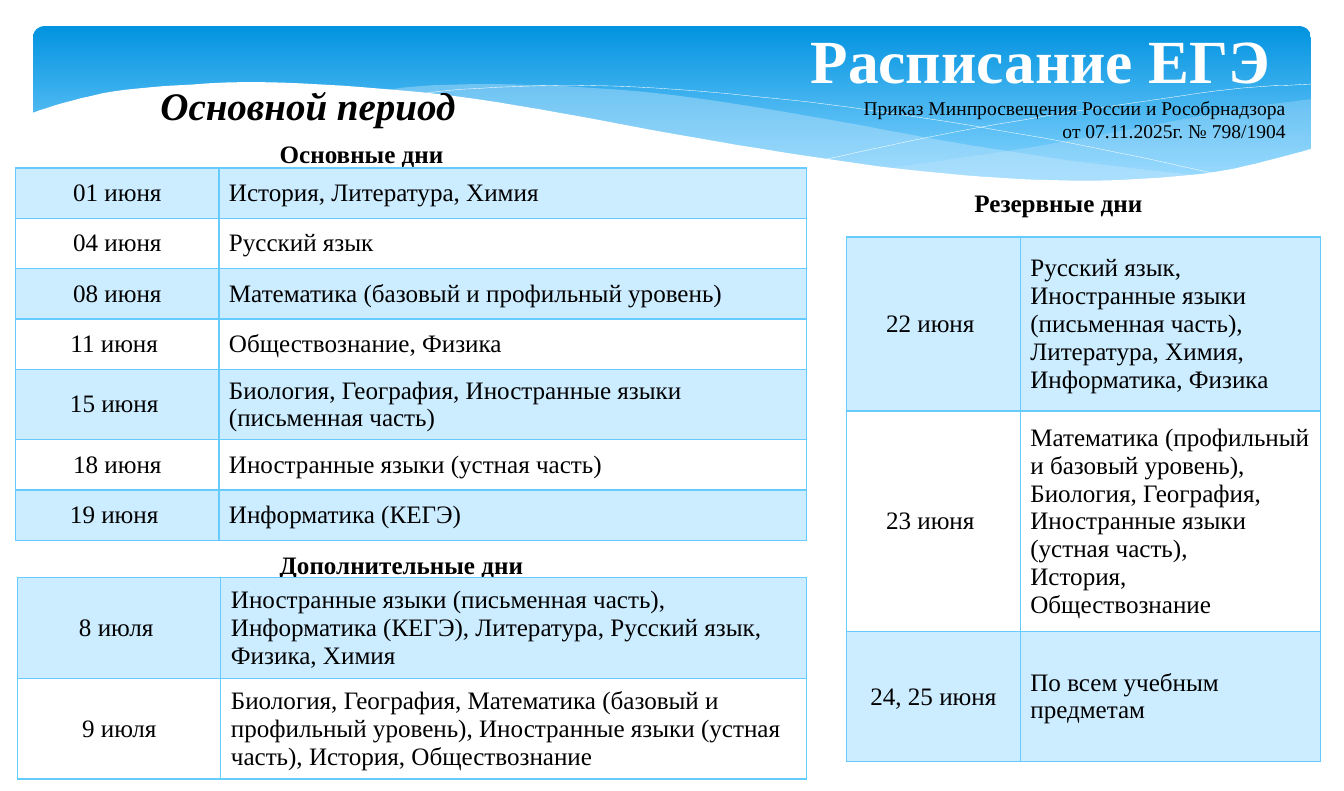
from dataclasses import dataclass
from lxml.etree import SubElement
from pptx import Presentation
from pptx.dml.color import RGBColor
from pptx.enum.shapes import MSO_SHAPE
from pptx.enum.text import MSO_ANCHOR, PP_ALIGN
from pptx.oxml.ns import qn
from pptx.util import Cm, Pt


@dataclass(frozen=True)
class Theme:
    """Colours, font and type sizes of the slide."""
    font: str = "Times New Roman"
    ink: str = "000000"
    paper: str = "FFFFFF"
    sky: str = "0293E0"
    pale: str = "83D3FE"
    mist: str = "C6E7FC"
    band: str = "CCECFF"
    rule: str = "66CCFF"
    title: int = 44
    head: int = 28
    body: int = 18
    note: int = 14


THEME = Theme()

SHEEN = [
    [(3233, 185), (3045, 211), (2842, 249), (2565, 300), (2316, 338), (2164, 361)],
    [(2164, 361), (2360, 378), (2647, 394), (2850, 386), (3048, 361), (3233, 312)],
]
SWELL = [
    [(2951, 378), (2659, 345), (2316, 292), (2055, 244), (1803, 201), (1577, 170),
     (1344, 152), (1146, 147), (980, 152), (889, 163)],
    [(889, 163), (1148, 193), (1445, 244), (1842, 315), (2126, 356), (2418, 386),
     (2659, 396), (2832, 391), (2951, 378)],
]
FALL = [[(968, 173), (1085, 160), (1331, 150), (1577, 157), (1895, 185), (2177, 221),
         (2502, 274), (2743, 320), (3002, 376)]]
RISE = [[(2002, 338), (2278, 279), (2555, 229), (2863, 183), (3058, 157), (3233, 147)]]
FRONT = [
    [(3238, 310), (3145, 335), (3010, 366), (2850, 384), (2664, 391), (2446, 384),
     (2189, 361), (1887, 318), (1626, 274), (1339, 221), (1072, 178), (836, 155),
     (574, 142), (366, 150), (206, 165), (71, 196), (-5, 221)],
    [(-5, 531), (3238, 531)],
]

MAIN = [
    ("01 июня", "История, Литература, Химия"),
    ("04 июня", "Русский язык"),
    ("08 июня", "Математика (базовый и профильный уровень)"),
    ("11 июня ", "Обществознание, Физика"),
    ("15 июня ", "Биология, География, Иностранные языки (письменная часть)"),
    ("18 июня", "Иностранные языки (устная часть)"),
    ("19 июня ", "Информатика (КЕГЭ)"),
]
SPARE = [
    ("22 июня ", "Русский язык, Иностранные языки (письменная часть),\n"
                 "Литература, Химия, Информатика, Физика"),
    ("23 июня ", "Математика (профильный и базовый уровень), Биология, География, "
                 "Иностранные языки (устная часть),\nИстория, Обществознание"),
    ("24, 25 июня", "По всем учебным предметам"),
]
EXTRA = [
    ("8 июля ", "Иностранные языки (письменная часть), Информатика (КЕГЭ), "
                "Литература, Русский язык, Физика, Химия"),
    ("9 июля", "Биология, География, Математика (базовый и профильный уровень), "
               "Иностранные языки (устная часть), История, Обществознание"),
]


def paint(fill, tint):
    """Fill with one solid colour."""
    fill.solid()
    fill.fore_color.rgb = RGBColor.from_string(tint)


def write(para, text, size, tint=THEME.ink, bold=False, slant=False):
    """Add one run to a paragraph."""
    run = para.add_run()
    run.text = text
    font = run.font
    font.name, font.size, font.bold, font.italic = THEME.font, Pt(size), bold, slant
    font.color.rgb = RGBColor.from_string(tint)


def smooth(knots, steps=5):
    """Return points of a smooth curve through the knots."""
    ends = [knots[0], *knots, knots[-1]]
    points = [knots[0]]
    for a, b, c, d in zip(ends, ends[1:], ends[2:], ends[3:]):
        for step in range(1, steps + 1):
            t = step / steps
            points.append(tuple(
                (2 * q + (r - p) * t + (2 * p - 5 * q + 4 * r - s) * t ** 2
                 + (3 * q - p - 3 * r + s) * t ** 3) / 2
                for p, q, r, s in zip(a, b, c, d)))
    return points


def wave(slide, box, curves, tint, alpha=None, line=False):
    """Draw a wave, filled or as a line, from the corner of the box."""
    points = [point for knots in curves for point in smooth(knots)]
    pen = slide.shapes.build_freeform(*points[0], scale=Cm(0.01))
    pen.add_line_segments(points[1:], close=not line)
    shape = pen.convert_to_shape(Cm(box[0]), Cm(box[1]))
    shape.shadow.inherit = False
    if line:
        shape.fill.background()
        paint(shape.line.fill, tint)
        shape.line.width = Pt(0.25)
        return
    paint(shape.fill, tint)
    shape.line.fill.background()
    if alpha:
        shade = shape.fill._xPr.find(qn("a:solidFill"))[0]
        SubElement(shade, qn("a:alpha"), val=str(alpha * 1000))


def banner(slide, box):
    """Draw the blue banner and its waves."""
    shape = slide.shapes.add_shape(MSO_SHAPE.ROUNDED_RECTANGLE, *map(Cm, box))
    shape.adjustments[0] = 0.07
    shape.shadow.inherit = False
    shape.line.fill.background()
    shape.fill.gradient()
    shape.fill.gradient_angle = 270
    stops = zip(shape.fill.gradient_stops, (THEME.sky, THEME.pale), (0, 0.9))
    for stop, tint, place in stops:
        stop.color.rgb = RGBColor.from_string(tint)
        stop.position = place
    wave(slide, box, SHEEN, THEME.mist, 29)
    wave(slide, box, SWELL, THEME.mist, 40)
    wave(slide, box, FALL, THEME.paper, line=True)
    wave(slide, box, RISE, THEME.paper, line=True)
    wave(slide, box, FRONT, THEME.paper)


def frame(slide, box):
    """Add a wrapping text box and return its first paragraph."""
    text = slide.shapes.add_textbox(*map(Cm, box)).text_frame
    text.word_wrap = True
    return text.paragraphs[0]


def title(slide, box):
    """Write the title and the order it rests on."""
    para = frame(slide, box)
    para._parent.vertical_anchor = MSO_ANCHOR.MIDDLE
    para.alignment = PP_ALIGN.RIGHT
    write(para, "Расписание ЕГЭ ", THEME.title, THEME.paper, bold=True)
    for part in ("Приказ Минпросвещения России и Рособрнадзора",
                 "от 07.11.2025г. № 798/1904"):
        para.add_line_break()
        write(para, part, THEME.note)


def label(slide, box, text, size=THEME.body, slant=False):
    """Write a bold heading."""
    write(frame(slide, box), text, size, bold=True, slant=slant)


def edge(cell):
    """Rule all four sides of a cell."""
    props = cell._tc.get_or_add_tcPr()
    for spot, side in enumerate(("lnL", "lnR", "lnT", "lnB")):
        line = props.makeelement(qn(f"a:{side}"), {"w": str(Pt(1))})
        fill = SubElement(line, qn("a:solidFill"))
        SubElement(fill, qn("a:srgbClr"), val=THEME.rule)
        props.insert(spot, line)


def grid(slide, box, days, first, highs):
    """Build a table of dates and subjects in the box."""
    table = slide.shapes.add_table(len(days), 2, *map(Cm, box)).table
    table.first_row = table.horz_banding = False
    for col, width in zip(table.columns, (first, box[2] - first)):
        col.width = Cm(width)
    for index, (row, high, day) in enumerate(zip(table.rows, highs, days)):
        row.height = Cm(high)
        for cell, text, side in zip(row.cells, day, (PP_ALIGN.CENTER, PP_ALIGN.LEFT)):
            paint(cell.fill, THEME.paper if index % 2 else THEME.band)
            edge(cell)
            cell.vertical_anchor = MSO_ANCHOR.MIDDLE
            for number, part in enumerate(text.split("\n")):
                frame = cell.text_frame
                para = frame.add_paragraph() if number else frame.paragraphs[0]
                para.alignment = side
                write(para, part, THEME.body)


def main():
    """Build and save the timetable slide."""
    deck = Presentation()
    deck.slide_width, deck.slide_height = Cm(34.01), Cm(20.02)
    slide = deck.slides.add_slide(deck.slide_layouts[6])
    banner(slide, (0.84, 0.66, 32.33, 4.17))
    title(slide, (19.81, 0.28, 12.98, 3.61))
    label(slide, (3.81, 1.93, 8.61, 1.45), "Основной период", THEME.head, True)
    label(slide, (6.83, 3.38, 6.81, 1.02), "Основные дни")
    label(slide, (24.41, 4.62, 6.81, 1.02), "Резервные дни")
    label(slide, (6.83, 13.77, 6.81, 1.02), "Дополнительные дни")
    grid(slide, (0.4, 4.25, 20, 9.43), MAIN, 5.14,
         [1.78 if index == 4 else 1.275 for index in range(len(MAIN))])
    grid(slide, (21.42, 6, 12, 13.1), SPARE, 4.4, [4.4, 5.42, 3.28])
    grid(slide, (0.45, 14.62, 19.95, 5.1), EXTRA, 5.14, [2.55] * 2)
    deck.save("out.pptx")


if __name__ == "__main__":
    main()
